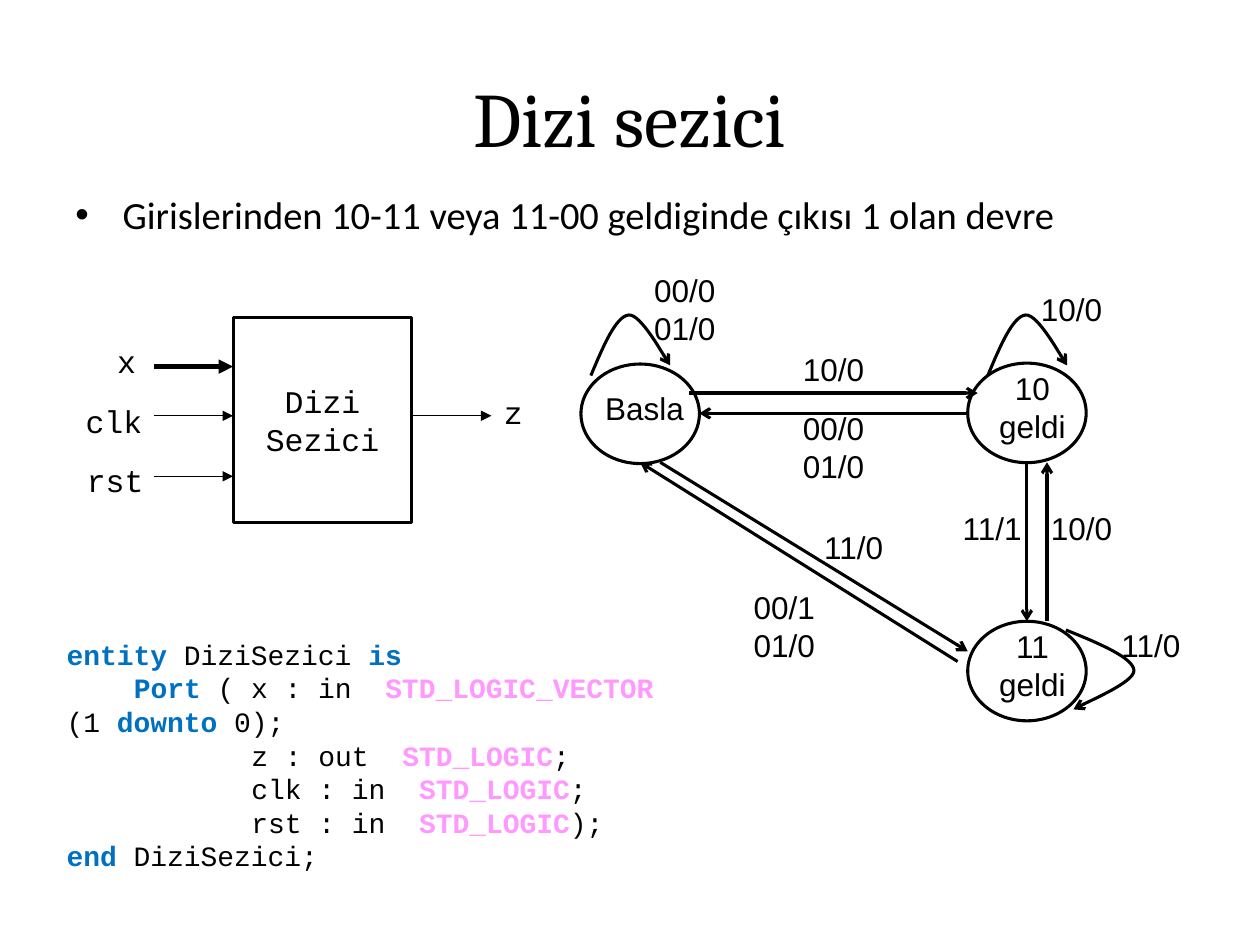
"""Build the sequence detector slide: block diagram, state graph and VHDL entity."""
from dataclasses import dataclass
from typing import NamedTuple

from lxml import etree
from pptx import Presentation
from pptx import util as u
from pptx.dml.color import RGBColor
from pptx.enum import shapes, text
from pptx.oxml import ns


@dataclass(frozen=True)
class Theme:
    ink: str = "000000"
    keyword: str = "0070C0"
    type_name: str = "FF99FF"
    title_font: str = "Cambria"
    body_font: str = "Calibri"
    label_font: str = "Arial"
    code_font: str = "Courier New"
    title_size: float = 44
    body_size: float = 22
    label_size: float = 18
    code_size: float = 16
    thin: float = 0.75
    medium: float = 1.75
    thick: float = 2.75


T = Theme()
LABEL_W, LINE_H = 62.6, 21.6
STATE_W, STATE_H = 67.7, 56.9
CODE_CHAR = 9.6


class Run(NamedTuple):
    text: str
    color: str = T.ink
    bold: bool = False


class CodeLine(NamedTuple):
    indent: int
    runs: list[Run]


class State(NamedTuple):
    name: str
    x: float
    y: float
    text_dx: float
    text_dy: float


class Label(NamedTuple):
    text: str
    x: float
    y: float
    w: float = LABEL_W


class Arrow(NamedTuple):
    x1: float
    y1: float
    x2: float
    y2: float
    width: float = T.medium
    head: str = "arrow"


Point = tuple[float, float]


def kw(word: str) -> Run:
    """Return a keyword run."""
    return Run(word, T.keyword, True)


def typ(word: str) -> Run:
    """Return a type name run."""
    return Run(word, T.type_name, True)


STATES = [
    State("Basla", 332, 208, 5, 11),
    State("10 geldi", 553, 207.5, 5.7, 0),
    State("11 geldi", 553, 355, 5.7, 0),
]
TRANSITIONS = [
    Arrow(393.8, 224.6, 558.7, 224.6),
    Arrow(553, 236.2, 399.6, 236.2),
    Arrow(586.8, 264.2, 586.8, 355),
    Arrow(598.3, 355, 598.3, 264.2),
    Arrow(377.3, 264.2, 553, 372.2),
    Arrow(547.2, 378, 365.8, 264.2),
]
TRANSITION_LABELS = [
    Label("10/0", 445, 196.6),
    Label("00/0\n01/0", 445, 230.4),
    Label("11/1", 535.7, 287.3),
    Label("10/0", 586.8, 287.3),
    Label("11/0", 456.5, 298.1),
    Label("00/1\n01/0", 416.9, 332.6),
    Label("00/0\n01/0", 360, 151.2),
    Label("10/0", 581, 162),
    Label("11/0", 626.4, 354.2),
]
TOP_LOOP = [(337.7, 214.6), (344.9, 197.3), (352.1, 180.7), (359.3, 180),
            (366.5, 179.3), (379.4, 203.8), (383, 208.8)]
SIDE_LOOP = [(609.1, 360), (628.6, 367.9), (647.3, 375.8), (648, 383),
             (648.7, 390.2), (619.2, 401.8), (613.4, 405.4)]
LOOPS = [TOP_LOOP, [(x + 226.8, y) for x, y in TOP_LOOP], SIDE_LOOP]
SIGNALS = [
    Arrow(87.8, 209.5, 133.2, 209.5, T.thick, "triangle"),
    Arrow(87.8, 237.6, 133.2, 237.6, T.thin, "triangle"),
    Arrow(87.8, 272.2, 133.2, 272.2, T.thin, "triangle"),
    Arrow(235.4, 237.6, 280.8, 237.6, T.thin, "triangle"),
]
SIGNAL_LABELS = [
    Label("x", 59.8, 192.2, 39.6),
    Label("clk", 41.8, 226.1, 57),
    Label("rst", 42.5, 259.9, 57),
    Label("z", 280.8, 221, 28),
]
CODE = [
    CodeLine(0, [kw("entity"), Run(" DiziSezici "), kw("is")]),
    CodeLine(4, [kw("Port"), Run(" ( x : in  "), typ("STD_LOGIC_VECTOR"),
                 Run(" (1 "), kw("downto"), Run(" 0);")]),
    CodeLine(11, [Run("z : out  "), typ("STD_LOGIC"), Run(";")]),
    CodeLine(11, [Run("clk : in  "), typ("STD_LOGIC"), Run(";")]),
    CodeLine(11, [Run("rst : in  "), typ("STD_LOGIC"), Run(");")]),
    CodeLine(0, [kw("end"), Run(" DiziSezici;")]),
]


def write_text(tf, content: str | list[CodeLine], *, font: str = T.label_font,
               size: float = T.label_size, align=text.PP_ALIGN.LEFT,
               anchor=text.MSO_ANCHOR.TOP) -> None:
    """Fill a text frame with plain lines or coloured code lines."""
    tf.word_wrap = True
    tf.vertical_anchor = anchor
    if isinstance(content, str):
        content = [CodeLine(0, [Run(line)]) for line in content.split("\n")]
    for i, line in enumerate(content):
        p = tf.paragraphs[0] if i == 0 else tf.add_paragraph()
        p.alignment = align
        if line.indent:
            p._p.get_or_add_pPr().set("indent", str(u.Pt(line.indent * CODE_CHAR)))
        for run in line.runs:
            r = p.add_run()
            r.text = run.text
            r.font.name, r.font.size, r.font.bold = font, u.Pt(size), run.bold
            r.font.color.rgb = RGBColor.from_string(run.color)


def add_text(s, content: str | list[CodeLine], x: float, y: float, w: float, h: float, **fmt):
    """Add a text box and return it."""
    sp = s.shapes.add_textbox(u.Pt(x), u.Pt(y), u.Pt(w), u.Pt(h))
    write_text(sp.text_frame, content, **fmt)
    return sp


def add_label(s, label: Label, **fmt) -> None:
    """Add a label whose height follows its number of lines."""
    height = 7.2 + LINE_H * (1 + label.text.count("\n"))
    add_text(s, label.text, label.x, label.y, label.w, height, **fmt)


def set_line(sp, width: float, head: str = "") -> None:
    """Set the outline and an optional arrowhead at its end."""
    sp.line.color.rgb = RGBColor.from_string(T.ink)
    sp.line.width = u.Pt(width)
    if head:
        ln = sp._element.spPr.find(ns.qn("a:ln"))
        etree.SubElement(ln, ns.qn("a:tailEnd"), type=head)


def add_outline(s, kind, x: float, y: float, w: float, h: float):
    """Add an unfilled preset shape."""
    sp = s.shapes.add_shape(kind, u.Pt(x), u.Pt(y), u.Pt(w), u.Pt(h))
    sp.shadow.inherit = False
    sp.fill.background()
    set_line(sp, T.medium)
    return sp


def add_arrow(s, arrow: Arrow) -> None:
    """Add a straight arrow."""
    ends = [u.Pt(v) for v in arrow[:4]]
    sp = s.shapes.add_connector(shapes.MSO_CONNECTOR.STRAIGHT, *ends)
    set_line(sp, arrow.width, arrow.head)
    etree.SubElement(sp._element.spPr, ns.qn("a:effectLst"))


def bezier(a: Point, b: Point, c: Point, d: Point, steps: int = 16) -> list[Point]:
    """Sample a cubic curve, leaving out its first point."""
    def at(t: float, k: int) -> float:
        """Return one coordinate of the curve in EMU."""
        q = 1 - t
        return u.Pt(q**3 * a[k] + 3 * q * q * t * b[k] + 3 * q * t * t * c[k] + t**3 * d[k])
    return [(at(i / steps, 0), at(i / steps, 1)) for i in range(1, steps + 1)]


def add_loop(s, points: list[Point]) -> None:
    """Add a curved arrow made of two cubic curves."""
    fb = s.shapes.build_freeform(*(u.Pt(v) for v in points[0]))
    fb.add_line_segments(bezier(*points[:4]) + bezier(*points[3:]), close=False)
    sp = fb.convert_to_shape()
    sp.shadow.inherit = False
    sp.fill.background()
    set_line(sp, T.medium, "arrow")


def add_heading(s) -> None:
    """Add the title and the bulleted statement."""
    add_text(s, "Dizi sezici", 36, 21.6, 648, 90, font=T.title_font, size=T.title_size,
             align=text.PP_ALIGN.CENTER, anchor=text.MSO_ANCHOR.MIDDLE)
    sp = add_text(s, "Girislerinden 10-11 veya 11-00 geldiginde çıkısı 1 olan devre",
                  36, 105.8, 648, 39.6, font=T.body_font, size=T.body_size)
    pPr = sp.text_frame.paragraphs[0]._p.get_or_add_pPr()
    pPr.set("marL", str(u.Pt(27)))
    pPr.set("indent", str(u.Pt(-27)))
    etree.SubElement(pPr, ns.qn("a:buFont"), typeface=T.label_font)
    etree.SubElement(pPr, ns.qn("a:buChar"), char="•")


def main() -> None:
    """Build and save the slide."""
    prs = Presentation()
    prs.slide_width, prs.slide_height = u.Pt(720), u.Pt(540)
    s = prs.slides.add_slide(prs.slide_layouts[6])
    center = text.PP_ALIGN.CENTER
    add_heading(s)
    for st in STATES:
        add_outline(s, shapes.MSO_SHAPE.OVAL, st.x, st.y, STATE_W, STATE_H)
        add_text(s, st.name, st.x + st.text_dx, st.y + st.text_dy, LABEL_W, 50.4, align=center)
    for arrow in TRANSITIONS + SIGNALS:
        add_arrow(s, arrow)
    for loop in LOOPS:
        add_loop(s, loop)
    for label in TRANSITION_LABELS:
        add_label(s, label, align=center)
    box = add_outline(s, shapes.MSO_SHAPE.RECTANGLE, 133.2, 181.4, 102.2, 117.4)
    write_text(box.text_frame, "Dizi Sezici", font=T.code_font, align=center,
               anchor=text.MSO_ANCHOR.MIDDLE)
    for label in SIGNAL_LABELS:
        add_label(s, label, font=T.code_font)
    add_text(s, CODE, 31, 360.7, 368.6, 141.8, font=T.code_font, size=T.code_size)
    prs.save("out.pptx")


if __name__ == "__main__":
    main()
